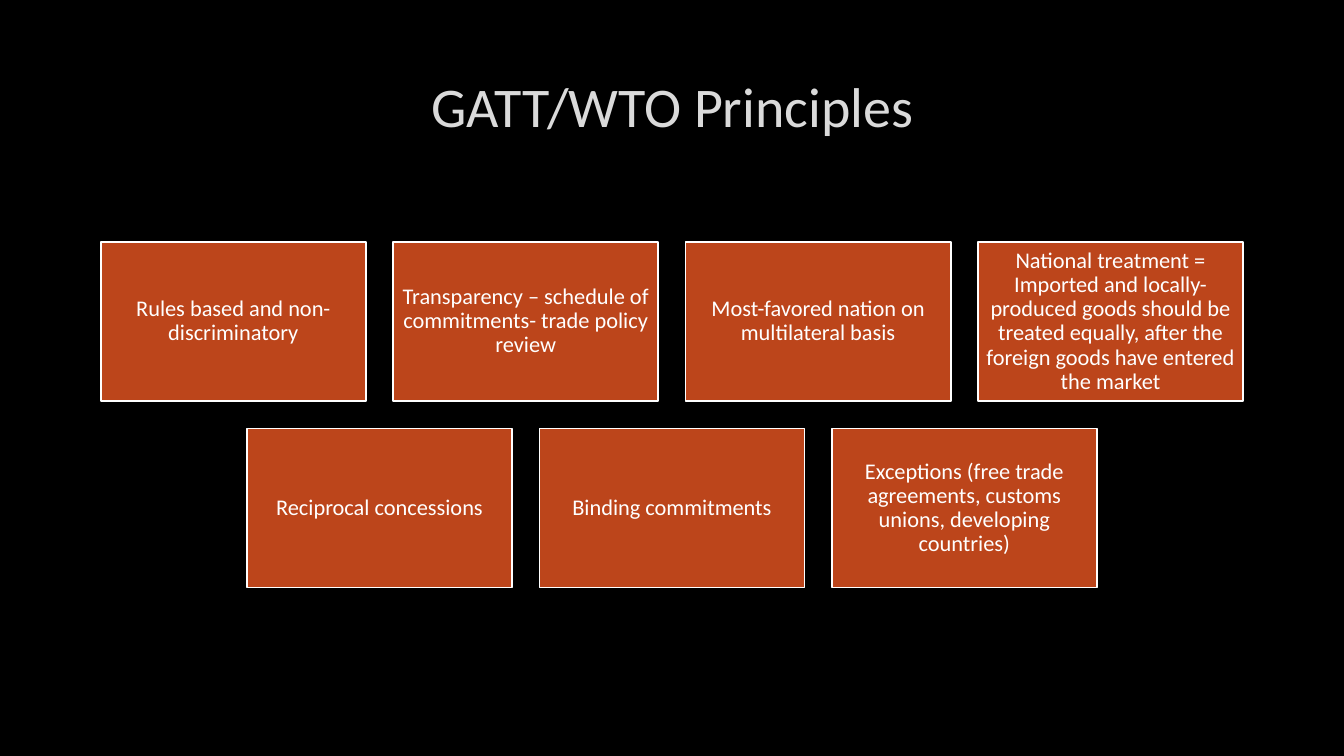
from pptx import Presentation
from pptx.dml.color import RGBColor
from pptx.enum.shapes import MSO_SHAPE
from pptx.enum.text import MSO_ANCHOR, PP_ALIGN
from pptx.util import Inches, Pt

ROWS = [
    [
        "Rules based and non-discriminatory",
        "Transparency – schedule of commitments- trade policy review",
        "Most-favored nation on multilateral basis",
        "National treatment = Imported and locally-produced goods should be "
        "treated equally, after the foreign goods have entered the market",
    ],
    [
        "Reciprocal concessions",
        "Binding commitments",
        "Exceptions (free trade agreements, customs unions, developing countries)",
    ],
]


def color(code):
    return RGBColor.from_string(code)


class Deck:
    font = "Calibri"
    back, rust, white, pale = "000000", "BC451B", "FFFFFF", "DADADA"
    left, top = 1, 2.4
    wide, high = 2.63, 1.58
    gap = 0.27
    cols = 4

    def __init__(self):
        self.prs = Presentation()
        self.prs.slide_width = Inches(13.33)
        self.prs.slide_height = Inches(7.5)
        self.slide = self.prs.slides.add_slide(self.prs.slide_layouts[6])
        fill = self.slide.background.fill
        fill.solid()
        fill.fore_color.rgb = color(self.back)

    def label(self, shape, text, size, ink):
        frame = shape.text_frame
        frame.word_wrap = True
        frame.vertical_anchor = MSO_ANCHOR.MIDDLE
        frame.text = text
        par = frame.paragraphs[0]
        par.alignment = PP_ALIGN.CENTER
        par.line_spacing = 0.9
        font = par.runs[0].font
        font.name, font.size = self.font, Pt(size)
        font.color.rgb = color(ink)

    def title(self, text):
        box = self.slide.shapes.add_textbox(
            Inches(0.92), Inches(0.36), Inches(11.5), Inches(1.45))
        self.label(box, text, 40, self.pale)

    def card(self, col, row, text):
        """Add a filled box at a grid cell; col may be fractional."""
        box = self.slide.shapes.add_shape(
            MSO_SHAPE.RECTANGLE,
            Inches(self.left + col * (self.wide + self.gap)),
            Inches(self.top + row * (self.high + self.gap)),
            Inches(self.wide), Inches(self.high))
        box.shadow.inherit = False
        box.fill.solid()
        box.fill.fore_color.rgb = color(self.rust)
        box.line.color.rgb = color(self.white)
        box.line.width = Pt(1.25)
        frame = box.text_frame
        frame.margin_left = frame.margin_right = Inches(0.07)
        frame.margin_top = frame.margin_bottom = Inches(0.07)
        self.label(box, text, 16, self.white)

    def cards(self, rows):
        """Lay out rows of cards, each row centred on the grid."""
        for row, texts in enumerate(rows):
            start = (self.cols - len(texts)) / 2
            for col, text in enumerate(texts):
                self.card(start + col, row, text)


def main():
    deck = Deck()
    deck.title("GATT/WTO Principles")
    deck.cards(ROWS)
    deck.prs.save("out.pptx")


if __name__ == "__main__":
    main()
